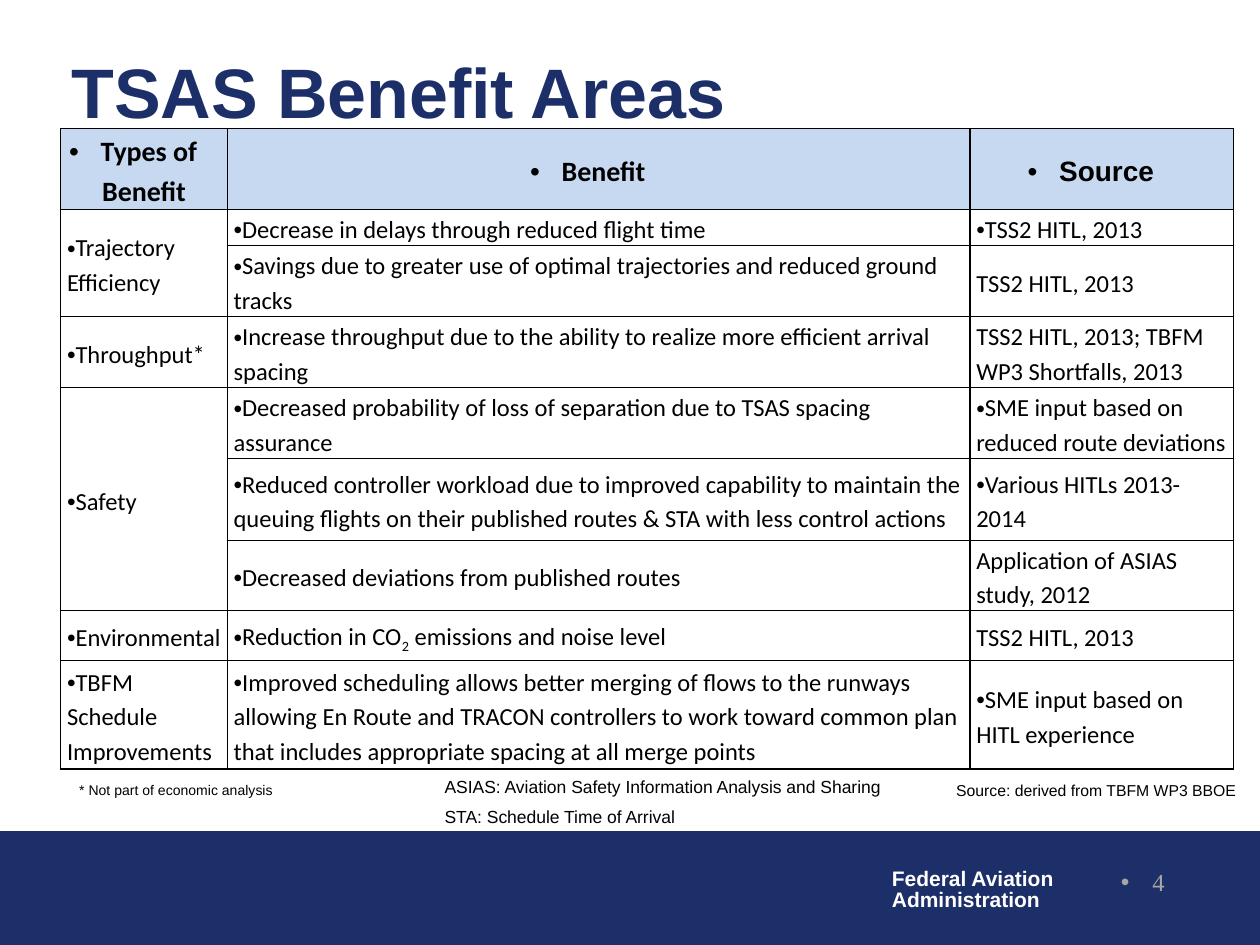
"""Build the TSAS benefit areas slide."""
from typing import NamedTuple

from lxml import etree
from pptx import Presentation
from pptx.dml.color import RGBColor
from pptx.enum import shapes, text
from pptx.oxml import ns
from pptx.util import Pt

NAVY = RGBColor(0x1D, 0x2F, 0x68)
PALE = RGBColor(0xC6, 0xD9, 0xF1)
GREY = RGBColor(0xA6, 0xA6, 0xA6)
BLACK = RGBColor(0, 0, 0)
WHITE = RGBColor(255, 255, 255)
LEFT, MID, RIGHT = text.PP_ALIGN.LEFT, text.PP_ALIGN.CENTER, text.PP_ALIGN.RIGHT
HANG = -18


class Style(NamedTuple):
    size: float
    face: str = "Arial"
    color: RGBColor = BLACK
    bold: bool = False
    align: text.PP_ALIGN = LEFT
    lead: float = 1.0
    before: float = 0
    after: float = 0


class Note(NamedTuple):
    left: float
    top: float
    width: float
    height: float
    lines: tuple[str, ...]
    style: Style
    wrap: bool = False
    anchor: text.MSO_ANCHOR = text.MSO_ANCHOR.TOP
    hang: int | None = None


class Entry(NamedTuple):
    row: int
    col: int
    words: str
    bullet: bool = True
    span: int = 1


HEAD = Style(16, "Calibri", bold=True, align=MID, lead=1.15)
BODY = Style(14, "Calibri", lead=1.15)
SMALL = Style(10, before=5)

NOTES = (
    Note(502.6, 493.2, 108, 31.7, ("Federal Aviation", "Administration"),
         Style(12, color=WHITE, bold=True, lead=0.85)),
    Note(33.8, 27.4, 667.4, 48.2, ("TSAS Benefit Areas",),
         Style(40, color=NAVY, bold=True), True, text.MSO_ANCHOR.MIDDLE),
    Note(539.3, 442.8, 180.7, 18, ("Source: derived from TBFM WP3 BBOE",),
         Style(9, after=6)),
    Note(38.2, 442.8, 126.7, 17.3, ("* Not part of economic analysis",),
         Style(8, after=6)),
    Note(247, 440, 266.4, 37.4,
         ("ASIAS: Aviation Safety Information Analysis and Sharing",
          "STA: Schedule Time of Arrival"), SMALL),
    Note(522.7, 491.8, 149.8, 36, ("4",),
         Style(14, "Times New Roman", GREY, align=RIGHT), True, hang=HANG),
)

COLS = (95.2, 424.4, 150.6)
ROWS = (46.3, 20.6, 40.6, 40.6, 40.6, 46.8, 40, 28.6, 62.2)
CELLS = (
    Entry(0, 0, "Types of Benefit"),
    Entry(0, 1, "Benefit"),
    Entry(0, 2, "Source"),
    Entry(1, 0, "Trajectory Efficiency", span=2),
    Entry(1, 1, "Decrease in delays through reduced flight time"),
    Entry(1, 2, "TSS2 HITL, 2013"),
    Entry(2, 1, "Savings due to greater use of optimal trajectories and "
          "reduced ground tracks"),
    Entry(2, 2, "TSS2 HITL, 2013", False),
    Entry(3, 0, "Throughput*"),
    Entry(3, 1, "Increase throughput due to the ability to realize more "
          "efficient arrival spacing"),
    Entry(3, 2, "TSS2 HITL, 2013; TBFM WP3 Shortfalls, 2013", False),
    Entry(4, 0, "Safety", span=3),
    Entry(4, 1, "Decreased probability of loss of separation due to TSAS "
          "spacing assurance"),
    Entry(4, 2, "SME input based on reduced route deviations"),
    Entry(5, 1, "Reduced controller workload due to improved capability to "
          "maintain the queuing flights on their published routes & STA "
          "with less control actions"),
    Entry(5, 2, "Various HITLs 2013-2014"),
    Entry(6, 1, "Decreased deviations from published routes"),
    Entry(6, 2, "Application of ASIAS study, 2012", False),
    Entry(7, 0, "Environmental"),
    Entry(7, 1, "Reduction in CO_2_ emissions and noise level"),
    Entry(7, 2, "TSS2 HITL, 2013", False),
    Entry(8, 0, "TBFM Schedule Improvements"),
    Entry(8, 1, "Improved scheduling allows better merging of flows to the "
          "runways allowing En Route and TRACON controllers to work toward "
          "common plan that includes appropriate spacing at all merge points"),
    Entry(8, 2, "SME input based on HITL experience"),
)


def assign(item, values: dict) -> None:
    """Set each named value on an item."""
    for name, value in values.items():
        setattr(item, name, value)


def write(para, words: str, style: Style, first: bool = True,
          hang: int | None = None) -> None:
    """Fill a paragraph, lowering any part between underscores."""
    assign(para, {"alignment": style.align, "line_spacing": style.lead,
                  "space_before": Pt(0 if first else style.before),
                  "space_after": Pt(style.after)})
    if hang is not None:
        props = para._p.get_or_add_pPr()
        props.set("marL", "0")
        props.set("indent", str(Pt(hang)))
        etree.SubElement(props, ns.qn("a:buFont")).set("typeface", "Arial")
        etree.SubElement(props, ns.qn("a:buChar")).set("char", "•")
    for index, part in enumerate(words.split("_")):
        run = para.add_run()
        run.text = part
        assign(run.font, {"size": Pt(style.size), "name": style.face,
                          "bold": style.bold})
        run.font.color.rgb = style.color
        if index % 2:
            run.font._element.set("baseline", "-25000")


def add_note(slide, note: Note) -> None:
    """Place a text box."""
    box = slide.shapes.add_textbox(*map(Pt, note[:4]))
    frame = box.text_frame
    assign(frame, {"word_wrap": note.wrap, "vertical_anchor": note.anchor})
    for index, line in enumerate(note.lines):
        para = frame.add_paragraph() if index else frame.paragraphs[0]
        write(para, line, note.style, index == 0, note.hang)


def edge(cell) -> None:
    """Draw thin black borders round a cell."""
    props = cell._tc.get_or_add_tcPr()
    for side in ("lnL", "lnR", "lnT", "lnB"):
        line = etree.SubElement(props, ns.qn("a:" + side), w=str(Pt(1)))
        fill = etree.SubElement(line, ns.qn("a:solidFill"))
        etree.SubElement(fill, ns.qn("a:srgbClr")).set("val", str(BLACK))


def add_grid(slide) -> None:
    """Place the benefit table."""
    table = slide.shapes.add_table(
        len(ROWS), len(COLS), Pt(34.7), Pt(73.3),
        Pt(sum(COLS)), Pt(sum(ROWS))).table
    assign(table, {"first_row": False, "horz_banding": False})
    for col, width in zip(table.columns, COLS):
        col.width = Pt(width)
    for row, height in zip(table.rows, ROWS):
        row.height = Pt(height)
    for cell in table.iter_cells():
        edge(cell)
        cell.fill.background()
        assign(cell, {"margin_left": Pt(3.6), "margin_right": Pt(3.6),
                      "margin_top": Pt(0.7), "margin_bottom": Pt(0),
                      "vertical_anchor": text.MSO_ANCHOR.MIDDLE})
    for entry in CELLS:
        cell = table.cell(entry.row, entry.col)
        if entry.span > 1:
            cell.merge(table.cell(entry.row + entry.span - 1, entry.col))
        style, hang = BODY, 0 if entry.bullet else None
        if entry.row == 0:
            cell.fill.solid()
            cell.fill.fore_color.rgb = PALE
            face = "Arial" if entry.col == 2 else HEAD.face
            style, hang = HEAD._replace(face=face), HANG
        write(cell.text_frame.paragraphs[0], entry.words, style, hang=hang)


def main() -> None:
    """Build and save the deck."""
    deck = Presentation()
    assign(deck, {"slide_width": Pt(720), "slide_height": Pt(540)})
    slide = deck.slides.add_slide(deck.slide_layouts[6])
    band = slide.shapes.add_shape(shapes.MSO_SHAPE.RECTANGLE,
                                  Pt(0), Pt(475.2), Pt(720), Pt(64.4))
    band.shadow.inherit = False
    band.fill.solid()
    band.fill.fore_color.rgb = band.line.color.rgb = NAVY
    band.line.width = Pt(0.75)
    add_grid(slide)
    for note in NOTES:
        add_note(slide, note)
    deck.save("out.pptx")


if __name__ == "__main__":
    main()
